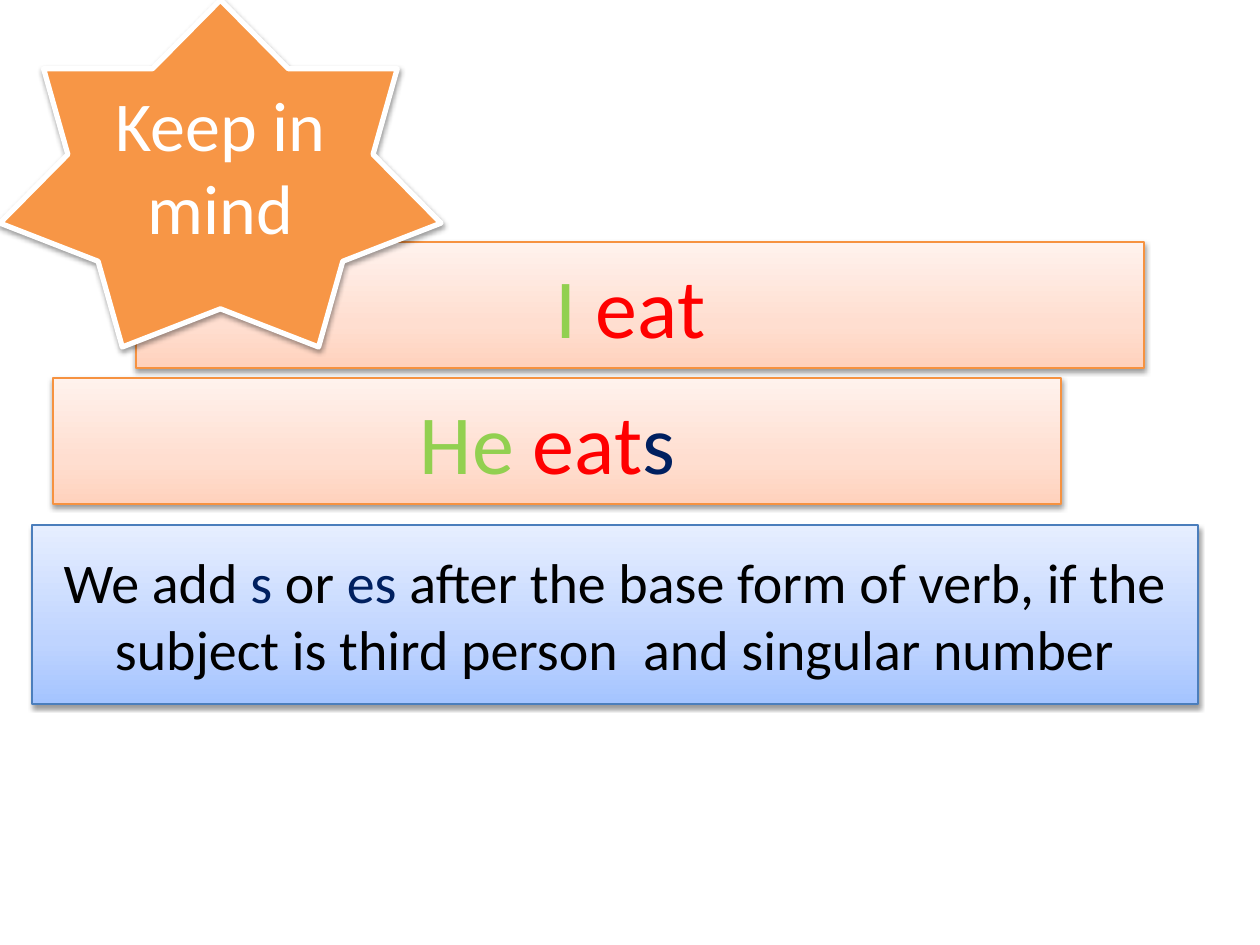
import copy

import pptx
import pptx.dml.color
import pptx.enum.shapes
import pptx.enum.text
import pptx.oxml
import pptx.oxml.ns
import pptx.util

FORM = pptx.enum.shapes.MSO_SHAPE
PEACH = ("FFD2BD", "FFDED0", "FFF2ED")
BLUE = ("A4C4FF", "BFD4FF", "E6EEFF")
STOPS = (0, 0.35, 1)
GREEN, RED, NAVY = "92D050", "FF0000", "002060"
BLACK, WHITE, ORANGE = "000000", "FFFFFF", "F79646"
SHADE = (
    '<a:outerShdw %s blurRad="40000" dist="20000" dir="5400000" rotWithShape="0">'
    '<a:srgbClr val="000000"><a:alpha val="38000"/></a:srgbClr></a:outerShdw>'
) % pptx.oxml.ns.nsdecls("a")


def px(num):
    return pptx.util.Emu(round(num * 914400 / 126))


def tint(code):
    return pptx.dml.color.RGBColor.from_string(code)


class Page:
    font = "Calibri"

    def __init__(self, deck):
        self.slide = deck.slides.add_slide(deck.slide_layouts[6])

    def shape(self, form, box, edge, width, size, runs):
        item = self.slide.shapes.add_shape(form, *map(px, box))
        item.line.color.rgb = tint(edge)
        item.line.width = pptx.util.Pt(width)
        self.shade(item)
        self.text(item.text_frame, size, runs)
        return item

    def shade(self, item):
        item.shadow.inherit = False
        effects = item._element.spPr.find(pptx.oxml.ns.qn("a:effectLst"))
        effects.append(pptx.oxml.parse_xml(SHADE))

    def text(self, frame, size, runs):
        frame.word_wrap = True
        frame.vertical_anchor = pptx.enum.text.MSO_ANCHOR.MIDDLE
        para = frame.paragraphs[0]
        para.alignment = pptx.enum.text.PP_ALIGN.CENTER
        para.font.name = self.font
        para.font.size = pptx.util.Pt(size)
        for words, color in runs:
            run = para.add_run()
            run.text = words
            run.font.color.rgb = tint(color)

    def panel(self, box, blend, edge, size, runs):
        fill = self.shape(FORM.RECTANGLE, box, edge, 0.75, size, runs).fill
        fill.gradient()
        fill.gradient_angle = 90
        first = fill.gradient_stops[0]._gs
        first.addnext(copy.deepcopy(first))
        for stop, place, color in zip(fill.gradient_stops, STOPS, blend):
            stop.position = place
            stop.color.rgb = tint(color)

    def verb(self, left, top, runs):
        self.panel((left, top, 1008, 126), PEACH, "F69240", 48, runs)

    def star(self, box, words):
        item = self.shape(FORM.STAR_7_POINT, box, WHITE, 3, 40, [(words, WHITE)])
        item.fill.solid()
        item.fill.fore_color.rgb = tint(ORANGE)


def main():
    deck = pptx.Presentation()
    deck.slide_width, deck.slide_height = px(1260), px(945)
    page = Page(deck)
    page.verb(136, 242, [("I ", GREEN), ("eat ", RED)])
    page.star((0, 0, 441, 347), "Keep in mind")
    rule = [
        ("We add ", BLACK),
        ("s", NAVY),
        (" or ", BLACK),
        ("es ", NAVY),
        ("after the base form of verb, if the subject is third person  and singular number", BLACK),
    ]
    page.panel((32, 525, 1166, 179), BLUE, "4B7EBC", 32, rule)
    page.verb(53, 378, [("He ", GREEN), ("eat", RED), ("s ", NAVY)])
    deck.save("out.pptx")


if __name__ == "__main__":
    main()
